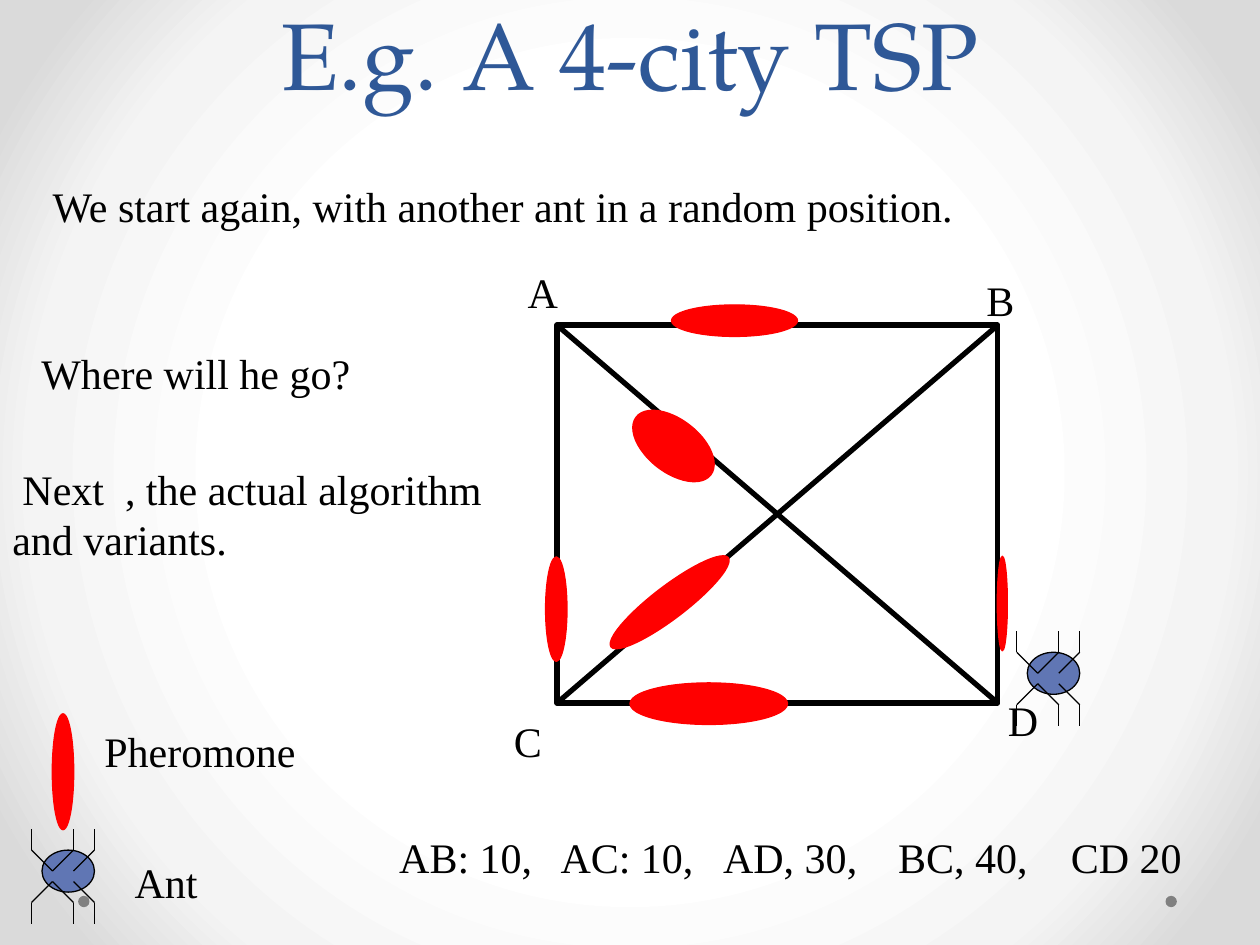
from pptx import Presentation
from pptx import util as u
from pptx.dml.color import RGBColor
from pptx.enum import shapes, text
from pptx.oxml import parse_xml
from pptx.oxml.ns import qn, nsdecls
from lxml import etree

BLACK = RGBColor(0, 0, 0)
RED = RGBColor(0xFF, 0, 0)
BLUE = RGBColor(0x60, 0x76, 0xB4)
NAVY = RGBColor(0x2F, 0x58, 0x97)
GREY = RGBColor(0x80, 0x80, 0x80)
GLOW = [(50, "FFFFFF"), (76, "F4F4F4"), (92, "DADADA")]

# Content: lines of text, then left, top, width, height
TITLE = "E.g. A 4-city TSP"
NOTES = [
    (["We start again, with another ant in a random position."], (0.32, 1.38, 7.37, 0.5)),
    (["Where will he go?"], (0.23, 2.71, 2.65, 0.5)),
    (["Pheromone"], (0.73, 5.71, 1.72, 0.5)),
    (["Ant"], (0.97, 6.75, 0.7, 0.5)),
]
NEXT = ["Next  , the actual algorithm", "and variants."]
LENGTHS = ["AB: 10,", "AC: 10,", "AD, 30,", "BC, 40,", "CD 20"]
LENGTH_TABS = [1.28, 2.57, 3.96, 5.33]
CITIES = {"A": (4.09, 2.07), "B": (7.73, 2.13), "C": (3.98, 5.63), "D": (7.9, 5.46)}
MAP = (4.42, 2.58, 3.5, 3)

# Pheromone: left, top, width, height, rotation
TRAILS = [
    (5, 5.42, 1.25, 0.33, 0),
    (5.33, 2.42, 1, 0.25, 0),
    (4.73, 4.65, 1.17, 0.26, 322.7),
    (4.97, 3.33, 0.75, 0.42, 37.8),
    (7.58, 4.75, 0.75, 0.08, 90),
    (4, 4.75, 0.83, 0.17, 90),
    (0.04, 6.04, 0.92, 0.17, 90),
]

# Ants lie on a grid of sixths of an inch; the lower legs mirror the upper ones
ANTS = [(8.07, 5.01), (0.25, 6.58)]
ANT_STEP = 1 / 6
ANT_ROWS = 4.5
LEGS = [[(2, 2), (3, 1), (3, 0)], [(1, 2), (2, 1), (2, 0)], [(1, 2), (0, 1), (0, 0)]]

prs = Presentation()
prs.slide_width, prs.slide_height = u.Inches(10), u.Inches(7.5)
slide = prs.slides.add_slide(prs.slide_layouts[6])


def inches(*values):
    return [u.Inches(v) for v in values]


def add_text(lines, box, size=24, font="Times New Roman", color=BLACK, wrap=False,
             align=text.PP_ALIGN.LEFT, anchor=text.MSO_ANCHOR.TOP, spacing=None):
    tf = slide.shapes.add_textbox(*inches(*box)).text_frame
    tf.word_wrap, tf.vertical_anchor = wrap, anchor
    for i, line in enumerate(lines):
        p = tf.add_paragraph() if i else tf.paragraphs[0]
        p.alignment = align
        if spacing:
            p.line_spacing = u.Pt(spacing)
        r = p.add_run()
        r.text = line
        r.font.size, r.font.name, r.font.color.rgb = u.Pt(size), font, color
    return tf


def add_preset(parent, kind, box, fill=None, line=None, weight=0.75, rotation=0):
    sp = parent.add_shape(kind, *inches(*box))
    sp.shadow.inherit = False
    sp.rotation = rotation
    if fill is None:
        sp.fill.background()
    else:
        sp.fill.solid()
        sp.fill.fore_color.rgb = fill
    if line is None:
        sp.line.fill.background()
    else:
        sp.line.color.rgb, sp.line.width = line, u.Pt(weight)


def add_line(parent, start, end, weight):
    line = parent.add_connector(shapes.MSO_CONNECTOR.STRAIGHT, *inches(*start, *end))
    line.line.color.rgb, line.line.width = BLACK, u.Pt(weight)
    etree.SubElement(line._element.spPr, qn("a:effectLst"))


def add_ant(left, top):
    def at(col, row):
        return left + col * ANT_STEP, top + row * ANT_STEP

    parts = slide.shapes.add_group_shape().shapes
    add_preset(parts, OVAL, (*at(0.5, 1), 2.5 * ANT_STEP, 2 * ANT_STEP), BLUE, BLACK)
    for leg in LEGS:
        for points in (leg, [(col, ANT_ROWS - row) for col, row in leg]):
            for start, end in zip(points, points[1:]):
                add_line(parts, at(*start), at(*end), 0.75)


OVAL = shapes.MSO_SHAPE.OVAL

# Background glow
slide.background.fill.solid()
bg = slide._element.find(".//" + qn("p:bgPr"))
stops = "".join(f'<a:gs pos="{pos * 1000}"><a:srgbClr val="{c}"/></a:gs>' for pos, c in GLOW)
bg.replace(bg[0], parse_xml(
    f'<a:gradFill {nsdecls("a")} rotWithShape="1"><a:gsLst>{stops}</a:gsLst><a:path path="circle">'
    '<a:fillToRect l="50000" t="50000" r="50000" b="50000"/></a:path></a:gradFill>'))

# Footer dots and title
for left in (9.25, 0.62):
    add_preset(slide.shapes, OVAL, (left, 7.11, 0.09, 0.09), GREY)
add_text([TITLE], (0.75, 0.25, 8.5, 0.67), size=54, font="TeX Gyre Pagella", color=NAVY,
         wrap=True, align=text.PP_ALIGN.CENTER, anchor=text.MSO_ANCHOR.BOTTOM, spacing=58)

# City map: square and diagonals
x, y, w, h = MAP
add_preset(slide.shapes, shapes.MSO_SHAPE.RECTANGLE, MAP, line=BLACK, weight=3)
add_line(slide.shapes, (x, y), (x + w, y + h), 3)
add_line(slide.shapes, (x, y + h), (x + w, y), 3)

# Ants, pheromone and city names
for ant in ANTS:
    add_ant(*ant)
for *box, rotation in TRAILS:
    add_preset(slide.shapes, OVAL, box, RED, RED, rotation=rotation)
for name, place in CITIES.items():
    add_text([name], (*place, 0.44, 0.5))

# Notes
for lines, box in NOTES:
    add_text(lines, box)
tf = add_text(NEXT, (0, 3.63, 3.96, 0.91))
tf.paragraphs[0]._p.get_or_add_pPr().set("indent", str(u.Inches(0.08)))

# Path lengths, set on tab stops
tf = add_text(["\t".join(LENGTHS)], (3.07, 6.55, 6.45, 0.5))
tabs = etree.SubElement(tf.paragraphs[0]._p.get_or_add_pPr(), qn("a:tabLst"))
for stop in LENGTH_TABS:
    etree.SubElement(tabs, qn("a:tab"), pos=str(u.Inches(stop)), algn="l")

prs.save("out.pptx")
